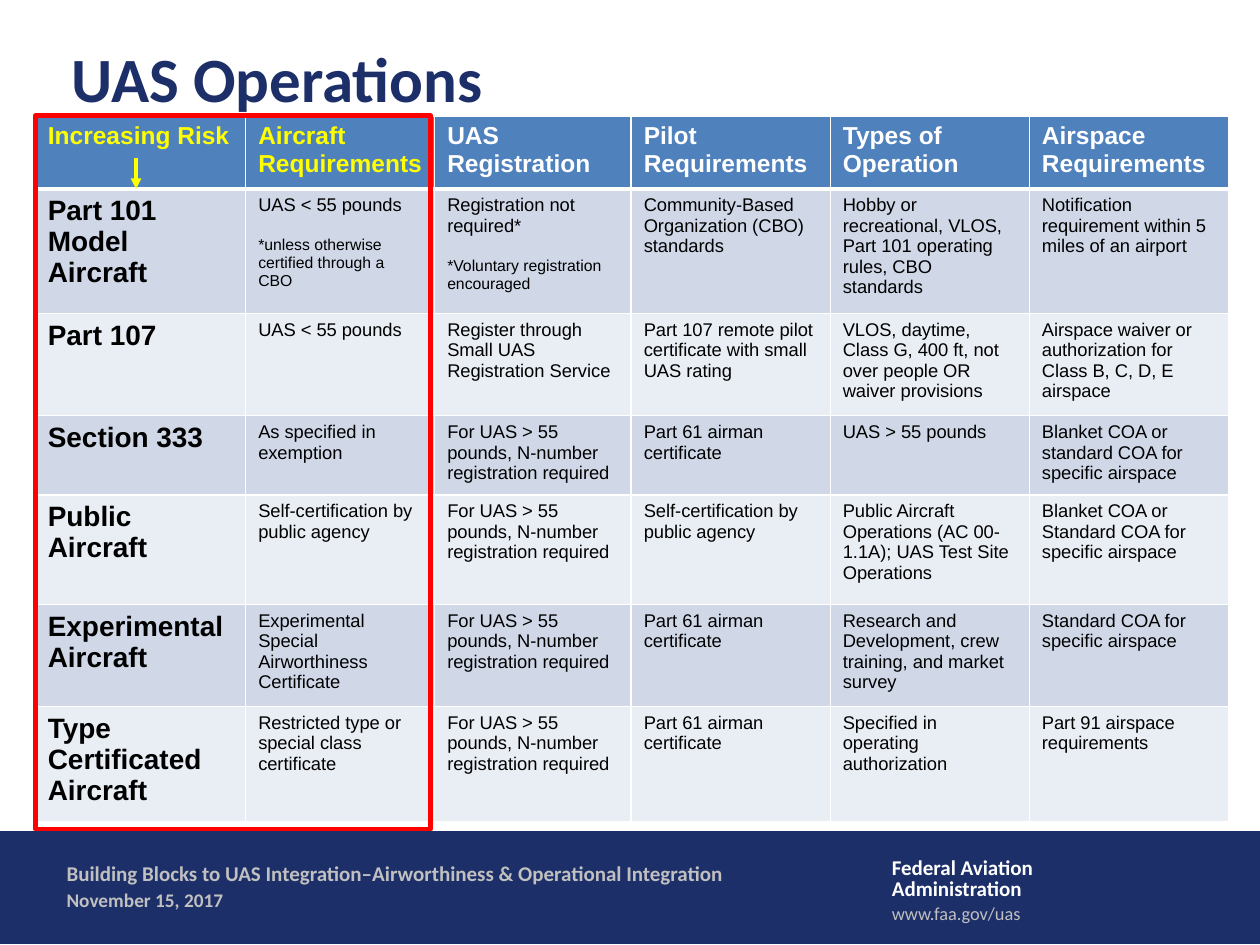
from dataclasses import dataclass
from typing import Any

from lxml import etree
from pptx import Presentation
from pptx.dml.color import RGBColor
from pptx.enum import shapes, text
from pptx.oxml.ns import qn
from pptx.util import Inches, Pt

COLORS = {
    "navy": "1D2F68", "white": "FFFFFF", "silver": "C0C0C0", "black": "000000",
    "header": "4F81BD", "odd": "D0D8E8", "even": "E9EDF4",
    "yellow": "FFFF00", "red": "FF0000",
}
TABLE_LEFT, TABLE_TOP = 0.28, 0.92
COLUMN_WIDTHS = [1.67, 1.5, 1.56, 1.58, 1.58, 1.58]
ROW_HEIGHTS = [0.58, 0.99, 0.81, 0.63, 0.87, 0.81, 0.91]

N_NUMBER = "For UAS > 55 pounds, N-number registration required"
AIRMAN = "Part 61 airman certificate"
SELF_CERTIFIED = "Self-certification by public agency"

# A line break in a cell separates its main text from its footnote
OPERATIONS = [
    ["Increasing Risk", "Aircraft Requirements", "UAS Registration",
     "Pilot Requirements", "Types of Operation", "Airspace Requirements"],
    ["Part 101 Model Aircraft",
     "UAS < 55 pounds\n*unless otherwise certified through a CBO",
     "Registration not required*\n*Voluntary registration encouraged",
     "Community-Based Organization (CBO) standards",
     "Hobby or recreational, VLOS, Part 101 operating rules, CBO standards",
     "Notification requirement within 5 miles of an airport"],
    ["Part 107", "UAS < 55 pounds",
     "Register through Small UAS Registration Service",
     "Part 107 remote pilot certificate with small UAS rating",
     "VLOS, daytime, Class G, 400 ft, not over people OR waiver provisions",
     "Airspace waiver or authorization for Class B, C, D, E airspace"],
    ["Section 333", "As specified in exemption", N_NUMBER, AIRMAN,
     "UAS > 55 pounds", "Blanket COA or standard COA for specific airspace"],
    ["Public Aircraft", SELF_CERTIFIED, N_NUMBER, SELF_CERTIFIED,
     "Public Aircraft Operations (AC 00-1.1A); UAS Test Site Operations",
     "Blanket COA or Standard COA for specific airspace"],
    ["Experimental Aircraft", "Experimental Special Airworthiness Certificate",
     N_NUMBER, AIRMAN, "Research and Development, crew training, and market survey",
     "Standard COA for specific airspace"],
    ["Type Certificated Aircraft", "Restricted type or special class certificate",
     N_NUMBER, AIRMAN, "Specified in operating authorization",
     "Part 91 airspace requirements"],
]


def color(name):
    return RGBColor.from_string(COLORS[name])


def write(para, words, size, fill, font="Arial", bold=False, spacing=None, before=0):
    span = para.add_run()
    span.text = words
    span.font.name, span.font.size, span.font.bold = font, Pt(size), bold
    span.font.color.rgb = color(fill)
    para.alignment = text.PP_ALIGN.LEFT
    para.space_before = Pt(before)
    if spacing:
        para.line_spacing = spacing


def set_borders(cell, **widths):
    properties = cell._tc.get_or_add_tcPr()
    for side in "LRTB":
        line = etree.SubElement(properties, qn(f"a:ln{side}"),
                                w=str(Pt(widths.get(side, 1))))
        fill = etree.SubElement(line, qn("a:solidFill"))
        etree.SubElement(fill, qn("a:srgbClr"), val=COLORS["white"])


@dataclass
class SlideBuilder:
    page: Any
    font: str = "Calibri"

    def title(self, words, left, top, width, height):
        box = self.page.shapes.title
        box.left, box.top = Inches(left), Inches(top)
        box.width, box.height = Inches(width), Inches(height)
        frame = box.text_frame
        frame.auto_size = text.MSO_AUTO_SIZE.NONE
        frame.vertical_anchor = text.MSO_ANCHOR.MIDDLE
        write(frame.paragraphs[0], words, 36, "navy", self.font, bold=True)

    def rectangle(self, left, top, width, height, line, weight, fill=None):
        box = self.page.shapes.add_shape(
            shapes.MSO_SHAPE.RECTANGLE,
            Inches(left), Inches(top), Inches(width), Inches(height))
        box.shadow.inherit = False
        box.line.color.rgb, box.line.width = color(line), Pt(weight)
        if fill:
            box.fill.solid()
            box.fill.fore_color.rgb = color(fill)
        else:
            box.fill.background()

    def text_box(self, lines, left, top, width, height, wrap=True, **style):
        box = self.page.shapes.add_textbox(
            Inches(left), Inches(top), Inches(width), Inches(height))
        frame = box.text_frame
        frame.word_wrap = wrap
        for index, words in enumerate(lines):
            para = frame.add_paragraph() if index else frame.paragraphs[0]
            write(para, words, font=self.font, **style)

    def table(self, rows):
        table = self.page.shapes.add_table(
            len(rows), len(rows[0]), Inches(TABLE_LEFT), Inches(TABLE_TOP),
            Inches(sum(COLUMN_WIDTHS)), Inches(sum(ROW_HEIGHTS))).table
        for column, width in zip(table.columns, COLUMN_WIDTHS):
            column.width = Inches(width)
        for index, height in enumerate(ROW_HEIGHTS):
            table.rows[index].height = Inches(height)
            for column, words in enumerate(rows[index]):
                self.cell(table.cell(index, column), index, column, words)

    def cell(self, cell, row, column, words):
        set_borders(cell, T=3 if row == 1 else 1, B=3 if row == 0 else 1)
        cell.fill.solid()
        cell.fill.fore_color.rgb = color(
            "header" if row == 0 else "odd" if row % 2 else "even")
        main, *notes = words.split("\n")
        if row == 0:
            style = dict(size=14, bold=True, fill="yellow" if column < 2 else "white")
        elif column == 0:
            style = dict(size=16, bold=True, fill="black")
        else:
            style = dict(size=10.5, fill="black")
        write(cell.text_frame.paragraphs[0], main, **style)
        for note in notes:
            write(cell.text_frame.add_paragraph(), note, 9, "black", before=12)

    def arrow(self, x, top, bottom, line, weight):
        arrow = self.page.shapes.add_connector(
            shapes.MSO_CONNECTOR.STRAIGHT,
            Inches(x), Inches(top), Inches(x), Inches(bottom))
        arrow.line.color.rgb, arrow.line.width = color(line), Pt(weight)
        etree.SubElement(arrow.line._get_or_add_ln(), qn("a:tailEnd"), type="triangle")
        etree.SubElement(arrow._element.spPr, qn("a:effectLst"))


def main():
    deck = Presentation()
    deck.slide_width, deck.slide_height = Inches(10), Inches(7.5)
    slide = SlideBuilder(deck.slides.add_slide(deck.slide_layouts[5]))

    # Footer band
    slide.rectangle(0, 6.6, 10, 0.89, "navy", 0.75, fill="navy")
    slide.text_box(["Federal Aviation", "Administration"], 6.98, 6.76, 1.34, 0.45,
                   wrap=False, size=12, fill="white", bold=True, spacing=0.85)
    slide.text_box(["Building Blocks to UAS Integration–Airworthiness & "
                    "Operational Integration"],
                   0.43, 6.78, 5.61, 0.3, size=12, fill="silver", bold=True)
    slide.text_box(["www.faa.gov/uas"], 6.98, 7.11, 2.52, 0.3,
                   size=10.5, fill="silver")
    slide.text_box(["November 15, 2017"], 0.43, 7, 5.23, 0.29,
                   size=11, fill="silver", bold=True)

    # Title and table
    slide.title("UAS Operations", 0.47, 0.28, 9.27, 0.67)
    slide.table(OPERATIONS)

    # Highlight of the first two columns, and the risk arrow
    slide.rectangle(TABLE_LEFT, TABLE_TOP, 3.14, 5.66, "red", 2.75)
    slide.arrow(1.08, 1.25, 1.5, "yellow", 2)

    deck.save("out.pptx")


if __name__ == "__main__":
    main()
